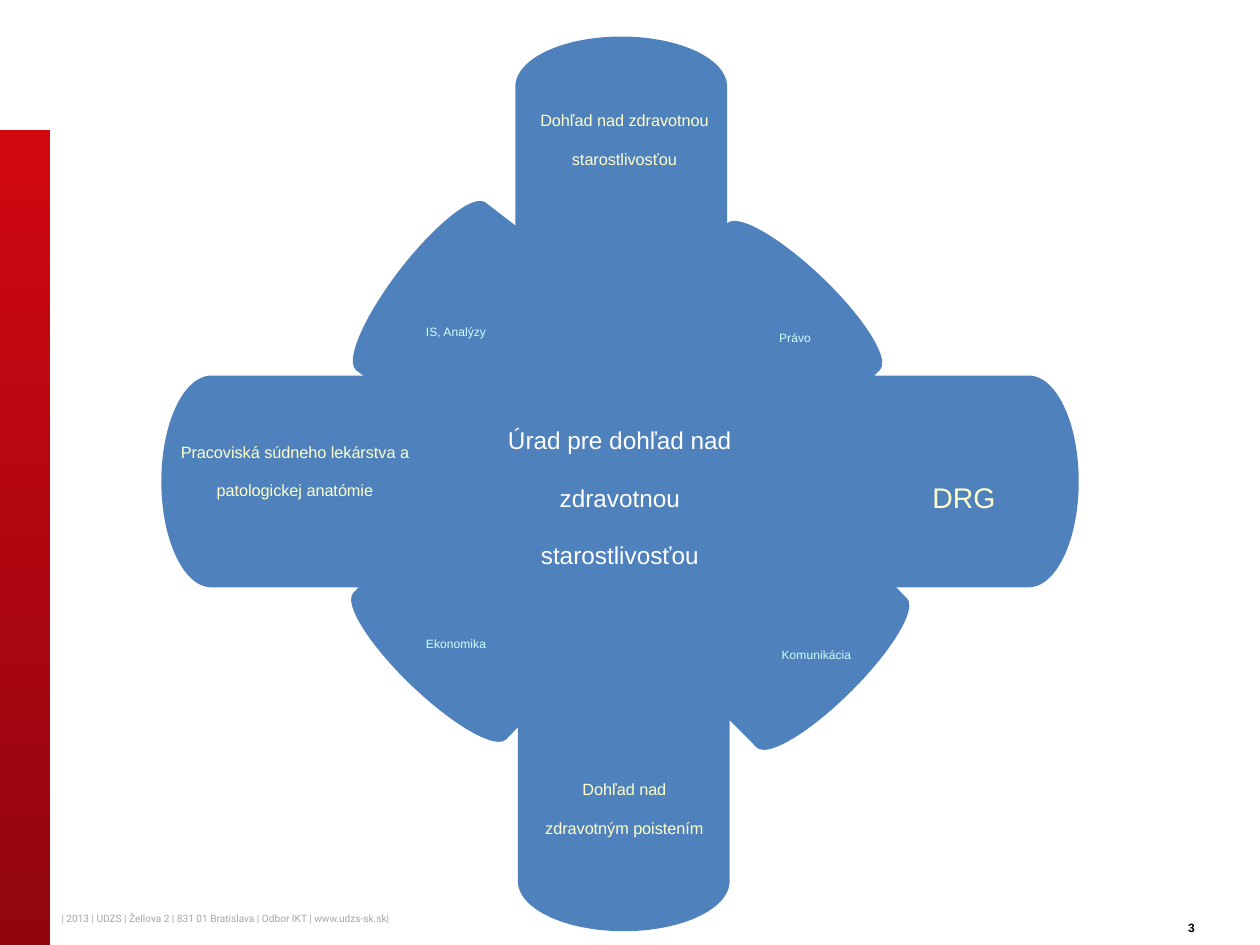
from pptx import Presentation
from pptx.dml.color import RGBColor
from pptx.enum.shapes import MSO_SHAPE
from pptx.enum.text import MSO_ANCHOR, PP_ALIGN
from pptx.util import Pt

RECT = MSO_SHAPE.RECTANGLE
OVAL = MSO_SHAPE.OVAL
DRUM = MSO_SHAPE.FLOWCHART_STORED_DATA
CENTER = PP_ALIGN.CENTER
LEFT = PP_ALIGN.LEFT
MIDDLE = MSO_ANCHOR.MIDDLE

BLUE = "4F81BD"
CREAM = "FFFFCC"
AQUA = "CCFFFF"

ARMS = [
    (269.3, 46.1, 90),
    (270.7, 385.9, 270),
    (92.2, 214.6, 0),
    (445, 214.6, 180),
]
PETALS = [
    (218.9, 121.7, 37.6),
    (392.4, 131, 133.7),
    (221, 298.1, 313.8),
    (408.2, 302.4, 225.2),
]
TASKS = [
    ("Dohľad nad zdravotnou starostlivosťou", 297.4, 49, 118.8, 65.5, 16),
    ("Dohľad nad zdravotným poistením", 303.1, 431.3, 107.3, 65.5, 16),
    ("DRG", 513.4, 252, 74.9, 28.8, 28),
    ("Pracoviská súdneho lekárstva a patologickej anatómie",
     93.6, 238.3, 149.8, 85, 16),
]
UNITS = [
    ("IS, Analýzy", 223.2, 173.5, 74.9),
    ("Právo", 416.9, 177.1, 74.9),
    ("Ekonomika", 223.2, 352.1, 74.9),
    ("Komunikácia", 419.8, 358.6, 93.6),
]


def color(code):
    return RGBColor.from_string(code)


def write(frame, text, size, code, align=CENTER, face="Arial", bold=False):
    frame.word_wrap = True
    para = frame.paragraphs[0]
    para.alignment = align
    run = para.add_run()
    run.text = text
    run._r.get_or_add_rPr().set("baseline", "-25000")
    font = para.font
    font.size = Pt(size)
    font.name = face
    font.bold = bold
    font.color.rgb = color(code)
    return para


def label(slide, text, x, y, w, h, size, code, **style):
    box = slide.shapes.add_textbox(Pt(x), Pt(y), Pt(w), Pt(h))
    return write(box.text_frame, text, size, code, **style)


def shape(slide, kind, x, y, w, h, turn=0):
    item = slide.shapes.add_shape(kind, Pt(x), Pt(y), Pt(w), Pt(h))
    item.shadow.inherit = False
    item.line.fill.background()
    item.fill.solid()
    item.fill.fore_color.rgb = color(BLUE)
    item.rotation = turn
    return item


def band(slide):
    fill = shape(slide, RECT, 0, 74.3, 28.8, 465.7).fill
    fill.gradient()
    fill.gradient_angle = 90
    for stop, code in zip(fill.gradient_stops, ("91050F", "D10811")):
        stop.color.rgb = color(code)


def main():
    deck = Presentation()
    deck.slide_width, deck.slide_height = Pt(720), Pt(540)
    slide = deck.slides.add_slide(deck.slide_layouts[6])

    label(slide, "3", 653.8, 514.1, 54, 21.6, 12, "000000", bold=True)
    foot = label(
        slide,
        "| 2013 | UDZS | Žellova 2 | 831 01 Bratislava | Odbor IKT | www.udzs-sk.sk|",
        28.1, 511.2, 383.8, 27.4, 10, "A6A6A6", align=LEFT, face="Roboto")
    foot.line_spacing = 0.9
    band(slide)

    hub = shape(slide, OVAL, 229.7, 157, 249.1, 238.3).text_frame
    hub.vertical_anchor = MIDDLE
    write(hub, "Úrad pre dohľad nad zdravotnou starostlivosťou", 24, "FFFFFF")

    for x, y, turn in ARMS:
        shape(slide, DRUM, x, y, 171.4, 121, turn)
    for text, x, y, w, h, size in TASKS:
        label(slide, text, x, y, w, h, size, CREAM)
    for x, y, turn in PETALS:
        shape(slide, DRUM, x, y, 91.4, 121, turn)
    for text, x, y, w in UNITS:
        label(slide, text, x, y, w, 21.6, 12, AQUA)

    deck.save("out.pptx")


if __name__ == "__main__":
    main()
